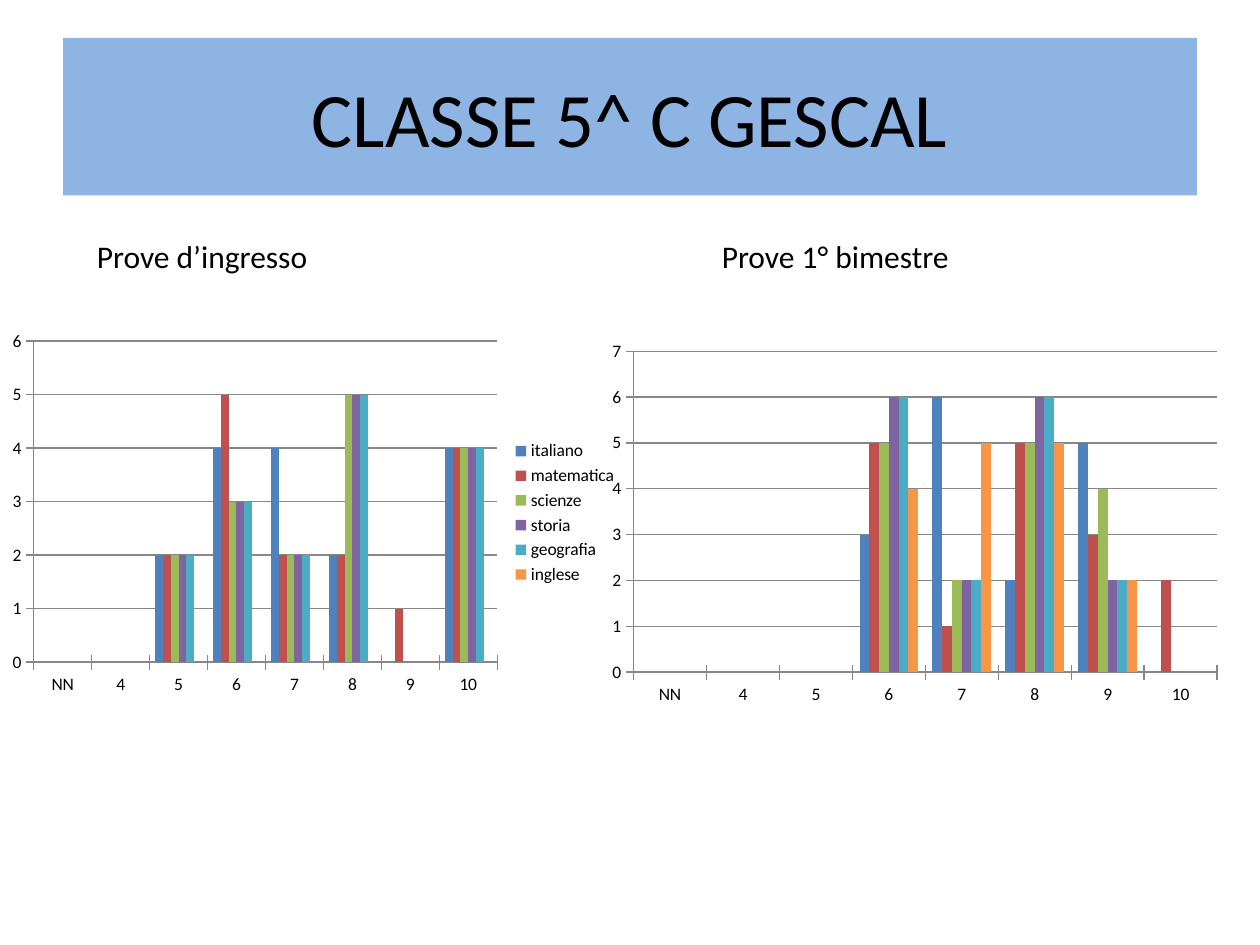
"""Build a class results slide with two clustered column charts."""
from dataclasses import dataclass

import pptx
import pptx.chart.data
import pptx.dml.color
import pptx.enum.chart
import pptx.enum.text
import pptx.util

RGB = pptx.dml.color.RGBColor
BLACK = RGB(0x00, 0x00, 0x00)
BANNER = RGB(0x8E, 0xB4, 0xE3)
AXIS_GREY = RGB(0x87, 0x87, 0x87)
SERIES_COLORS = (
    RGB(0x4F, 0x81, 0xBD),
    RGB(0xC0, 0x50, 0x4D),
    RGB(0x9B, 0xBB, 0x59),
    RGB(0x80, 0x64, 0xA2),
    RGB(0x4B, 0xAC, 0xC6),
    RGB(0xF7, 0x96, 0x46),
)
FONT = "Calibri"
WIDTH, HEIGHT = pptx.util.Inches(10), pptx.util.Inches(7.5)
GRADES = ("NN", "4", "5", "6", "7", "8", "9", "10")
SUBJECTS = ("italiano", "matematica", "scienze", "storia", "geografia", "inglese")


@dataclass(frozen=True)
class Box:
    """Hold a position and size as percentages of the slide."""
    left: float
    top: float
    width: float
    height: float

    def emu(self) -> tuple[int, int, int, int]:
        """Return left, top, width and height in EMU."""
        return (int(self.left * WIDTH / 100), int(self.top * HEIGHT / 100),
                int(self.width * WIDTH / 100), int(self.height * HEIGHT / 100))


@dataclass(frozen=True)
class Panel:
    """Hold a caption and the chart below it."""
    caption: str
    caption_box: Box
    chart_box: Box
    names: tuple
    values: tuple
    legend: bool


INGRESSO_COMMON = (None, None, 2, 3, 2, 5, None, 4)
STORIA_BIMESTRE = (None, None, None, 6, 2, 6, 2, None)
PANELS = (
    Panel("Prove d’ingresso", Box(6.7, 24.4, 18.9, 5.33), Box(0, 34.27, 50, 40),
          SUBJECTS,
          ((None, None, 2, 4, 4, 2, None, 4),
           (None, None, 2, 5, 2, 2, 1, 4),
           INGRESSO_COMMON, INGRESSO_COMMON, INGRESSO_COMMON,
           (None,) * len(GRADES)),
          True),
    Panel("Prove 1° bimestre", Box(56.3, 24.4, 20.2, 5.33), Box(47.6, 35.33, 50, 40),
          tuple(f"Series {i}" for i in range(1, 7)),
          ((None, None, None, 3, 6, 2, 5, None),
           (None, None, None, 5, 1, 5, 3, 2),
           (None, None, None, 5, 2, 5, 4, None),
           STORIA_BIMESTRE, STORIA_BIMESTRE,
           (None, None, None, 4, 5, 5, 2, None)),
          False),
)


def format_font(font, size: float) -> None:
    """Apply the slide's typeface and colour at a size in points."""
    font.name = FONT
    font.size = pptx.util.Pt(size)
    font.color.rgb = BLACK


def format_line(line) -> None:
    """Apply the thin grey line of axes and gridlines."""
    line.color.rgb = AXIS_GREY
    line.width = pptx.util.Pt(0.75)


def add_title(slide, text: str, box: Box) -> None:
    """Place and fill the title placeholder."""
    sp = slide.shapes.title
    sp.left, sp.top, sp.width, sp.height = box.emu()
    sp.fill.solid()
    sp.fill.fore_color.rgb = BANNER
    tf = sp.text_frame
    tf.text = text
    tf.vertical_anchor = pptx.enum.text.MSO_ANCHOR.MIDDLE
    p = tf.paragraphs[0]
    p.alignment = pptx.enum.text.PP_ALIGN.CENTER
    format_font(p.runs[0].font, 44)


def add_caption(slide, panel: Panel) -> None:
    """Add the caption of a panel."""
    tf = slide.shapes.add_textbox(*panel.caption_box.emu()).text_frame
    tf.text = panel.caption
    tf.word_wrap = False
    tf.auto_size = pptx.enum.text.MSO_AUTO_SIZE.SHAPE_TO_FIT_TEXT
    format_font(tf.paragraphs[0].runs[0].font, 18)


def add_results(slide, panel: Panel) -> None:
    """Add the column chart of a panel."""
    data = pptx.chart.data.CategoryChartData()
    data.categories = GRADES
    for name, values in zip(panel.names, panel.values):
        data.add_series(name, values)
    kind = pptx.enum.chart.XL_CHART_TYPE.COLUMN_CLUSTERED
    chart = slide.shapes.add_chart(kind, *panel.chart_box.emu(), data).chart
    chart.has_title = False
    format_font(chart.font, 10)
    chart.has_legend = panel.legend
    if panel.legend:
        chart.legend.position = pptx.enum.chart.XL_LEGEND_POSITION.RIGHT
        chart.legend.include_in_layout = False
    for axis in (chart.category_axis, chart.value_axis):
        axis.major_tick_mark = pptx.enum.chart.XL_TICK_MARK.CROSS
        format_line(axis.format.line)
    chart.value_axis.has_major_gridlines = True
    format_line(chart.value_axis.major_gridlines.format.line)
    plot = chart.plots[0]
    plot.vary_by_categories = False
    plot.gap_width = 150
    for series, color in zip(plot.series, SERIES_COLORS):
        series.format.fill.solid()
        series.format.fill.fore_color.rgb = color


def main() -> None:
    """Build and save the presentation."""
    prs = pptx.Presentation()
    prs.slide_width, prs.slide_height = WIDTH, HEIGHT
    s = prs.slides.add_slide(prs.slide_layouts.get_by_name("Title Only"))
    add_title(s, "CLASSE 5^ C GESCAL", Box(5, 4, 90, 16.67))
    for panel in PANELS:
        add_results(s, panel)
    for panel in PANELS:
        add_caption(s, panel)
    prs.save("out.pptx")


if __name__ == "__main__":
    main()
